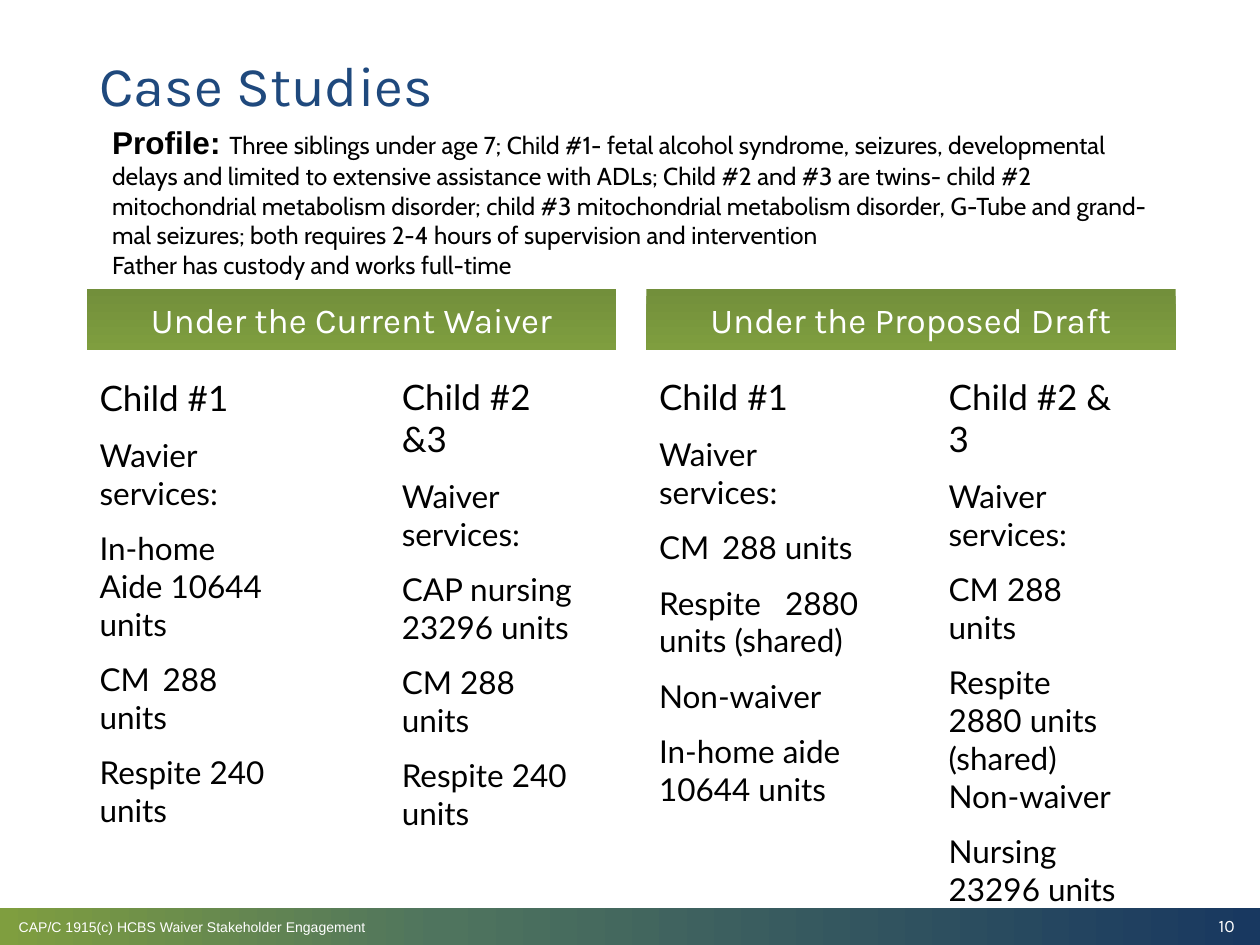
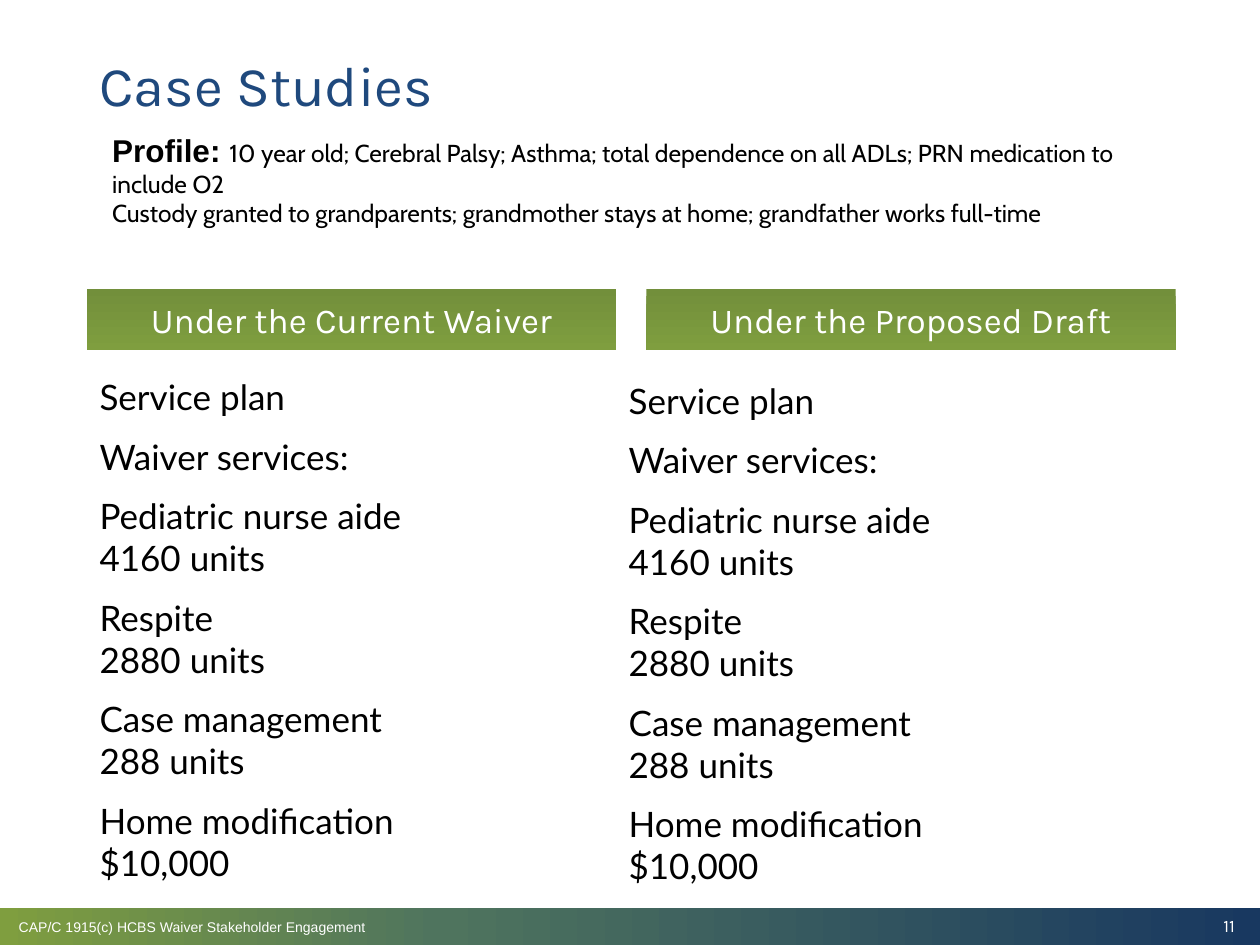
from dataclasses import dataclass

from lxml.etree import SubElement
from pptx import Presentation
from pptx.dml.color import RGBColor
from pptx.enum.shapes import MSO_SHAPE
from pptx.enum.text import MSO_ANCHOR as Anchor, MSO_AUTO_SIZE as AutoSize, PP_ALIGN as Align
from pptx.oxml.ns import qn
from pptx.util import Pt

TITLE = "Case Studies"
BANDS = ("Under the Current Waiver", "Under the Proposed Draft")
FOOTER = "CAP/C 1915(c) HCBS Waiver Stakeholder Engagement"

SERVICE_PLAN = [
    "Service plan",
    "Waiver services:",
    "Pediatric nurse aide\v4160 units",
    "Respite\v2880 units",
    "Case management\v288 units",
    "Home modification\v$10,000",
]

CASES = [
    {
        "number": "10",
        "profile": [
            "Three siblings under age 7; Child #1- fetal alcohol syndrome, seizures, developmental "
            "delays and limited to extensive assistance with ADLs; Child #2 and #3 are twins- "
            "child #2 mitochondrial metabolism disorder; child #3 mitochondrial metabolism disorder, "
            "G-Tube and grand-mal seizures; both requires 2-4 hours of supervision and intervention",
            "Father has custody and works full-time",
        ],
        "profile_box": (57, 67, 612, 148),
        "service_size": 18,
        "columns": [
            {
                "box": (49.7, 211.7, 113.8, 260),
                "tab": 38,
                "lines": ["Child #1", "Wavier services:", "In-home Aide 10644 units",
                          "CM\t288 units", "Respite 240 units"],
            },
            {
                "box": (369.4, 211, 131.8, 249),
                "tab": 47,
                "wide_tab": 67,
                "lines": ["Child #1", "Waiver services:", "CM\t288 units",
                          "Respite\t2880 units (shared)", "Non-waiver", "In-home aide 10644 units"],
            },
            {
                "box": (222.5, 211, 113.8, 232),
                "lines": ["Child #2 &3", "Waiver services:", "CAP nursing 23296 units",
                          "CM 288 units", "Respite 240 units"],
            },
            {
                "box": (535, 211, 113.8, 286),
                "lines": ["Child #2 & 3", "Waiver services:", "CM 288 units",
                          "Respite 2880 units (shared) Non-waiver", "Nursing 23296 units"],
            },
        ],
    },
    {
        "number": "11",
        "profile": [
            "10 year old; Cerebral Palsy; Asthma; total dependence on all ADLs; "
            "PRN medication to include O2",
            "Custody granted to grandparents; grandmother stays at home; grandfather works full-time",
        ],
        "profile_box": (57, 71.3, 612, 97),
        "service_size": 20,
        "columns": [
            {"box": (49.7, 211, 302.4, 232), "lines": SERVICE_PLAN},
            {"box": (352, 213, 302.4, 232), "lines": SERVICE_PLAN},
        ],
    },
]


@dataclass(frozen=True)
class Theme:
    title_color: str = "1F497D"
    text_color: str = "000000"
    light_color: str = "FFFFFF"
    band_stops: tuple = ((0, "728F3B"), (100, "7F9E3F"))
    footer_stops: tuple = ((0, "7F9E3F"), (35, "4F745E"), (100, "183860"))
    heading_font: str = "Karla"
    list_font: str = "Lato"
    profile_font: str = "Cabin"
    label_font: str = "Arial"
    title_size: float = 32
    heading_size: float = 20
    label_size: float = 18
    profile_size: float = 14
    number_size: float = 10
    footer_size: float = 8


THEME = Theme()
WIDTH, HEIGHT = 720, 540
TITLE_BOX = (49.7, 6.5, 619.2, 64.8)
BAND_BOX = (49.7, 165, 302.4, 35.3)
BAND_STEP = 319.7
FOOTER_BOX = (0, 519, WIDTH, 21)
FOOTER_TEXT_BOX = (3.6, 521.3, 566, 17.3)
NUMBER_BOX = (543.6, 523.4, 162, 10.8)
BAND_INDEXES = (1, 3)
LIST_INDEXES = (2, 4)


def place(shape, box):
    shape.left, shape.top, shape.width, shape.height = (Pt(value) for value in box)


def style_run(run, font, size, color, bold=False):
    run.font.name = font
    run.font.size = Pt(size)
    run.font.bold = bold
    run.font.color.rgb = RGBColor.from_string(color)


def style_paragraph(paragraph, font, size, color, align=Align.LEFT, before=0, tab=None):
    paragraph.alignment = align
    paragraph.space_before = Pt(before)
    properties = paragraph._p.get_or_add_pPr()
    properties.set("marL", "0")
    properties.set("indent", "0")
    SubElement(properties, qn("a:buNone"))
    if tab:
        tabs = SubElement(properties, qn("a:tabLst"))
        SubElement(tabs, qn("a:tab"), pos=str(Pt(tab)), algn="l")
    for run in paragraph.runs:
        style_run(run, font, size, color)


def prepare_frame(shape, anchor=Anchor.TOP):
    frame = shape.text_frame
    frame.word_wrap = True
    frame.auto_size = AutoSize.NONE
    frame.vertical_anchor = anchor
    return frame


def set_gradient(shape, stops, angle):
    shape.fill.gradient()
    shape.fill.gradient_angle = angle
    stop_list = next(shape._element.spPr.iter(qn("a:gsLst")))
    for stop in list(stop_list):
        stop_list.remove(stop)
    for position, color in stops:
        stop = SubElement(stop_list, qn("a:gs"), pos=str(position * 1000))
        SubElement(stop, qn("a:srgbClr"), val=color)


def add_text_box(slide, box):
    return slide.shapes.add_textbox(*(Pt(value) for value in box))


def write_line(shape, text, font, size, color, align=Align.LEFT, anchor=Anchor.MIDDLE, before=0):
    frame = prepare_frame(shape, anchor)
    frame.text = text
    style_paragraph(frame.paragraphs[0], font, size, color, align, before)
    return frame


def add_footer(slide, number):
    strip = slide.shapes.add_shape(MSO_SHAPE.RECTANGLE, *(Pt(value) for value in FOOTER_BOX))
    strip.shadow.inherit = False
    strip.line.fill.background()
    set_gradient(strip, THEME.footer_stops, 0)
    write_line(add_text_box(slide, FOOTER_TEXT_BOX), FOOTER,
               THEME.label_font, THEME.footer_size, THEME.light_color)
    frame = write_line(add_text_box(slide, NUMBER_BOX), number, THEME.heading_font,
                       THEME.number_size, THEME.light_color, Align.RIGHT)
    frame.margin_left = frame.margin_right = frame.margin_top = frame.margin_bottom = 0


def add_title(slide):
    title = slide.shapes.title
    place(title, TITLE_BOX)
    frame = write_line(title, TITLE, THEME.heading_font, THEME.title_size,
                       THEME.title_color, anchor=Anchor.BOTTOM, before=7.5)
    frame.paragraphs[0].line_spacing = 0.9


def add_bands(slide):
    left, top, width, height = BAND_BOX
    for position, (index, text) in enumerate(zip(BAND_INDEXES, BANDS)):
        band = slide.placeholders[index]
        place(band, (left + position * BAND_STEP, top, width, height))
        set_gradient(band, THEME.band_stops, 270)
        write_line(band, text, THEME.heading_font, THEME.heading_size,
                   THEME.light_color, Align.CENTER)


def add_profile(slide, paragraphs, box):
    frame = prepare_frame(add_text_box(slide, box))
    frame.text = "\n".join(["Profile: "] + paragraphs[1:])
    for paragraph in frame.paragraphs:
        style_paragraph(paragraph, THEME.profile_font, THEME.profile_size, THEME.text_color)
    opening = frame.paragraphs[0]
    style_run(opening.runs[0], THEME.label_font, THEME.label_size, THEME.text_color, True)
    description = opening.add_run()
    description.text = paragraphs[0]
    style_run(description, THEME.profile_font, THEME.profile_size, THEME.text_color)


def fill_column(shape, column, service_size):
    frame = prepare_frame(shape)
    frame.text = "\n".join(column["lines"])
    for position, paragraph in enumerate(frame.paragraphs):
        size = service_size if position else THEME.heading_size
        tab = None
        if "\t" in paragraph.text:
            is_wide = paragraph.text.startswith("Respite")
            tab = column["wide_tab"] if is_wide else column["tab"]
        style_paragraph(paragraph, THEME.list_font, size, THEME.text_color, before=10, tab=tab)


def add_columns(slide, columns, service_size):
    for position, column in enumerate(columns):
        if position < len(LIST_INDEXES):
            shape = slide.placeholders[LIST_INDEXES[position]]
            place(shape, column["box"])
        else:
            shape = add_text_box(slide, column["box"])
        fill_column(shape, column, service_size)


def main():
    presentation = Presentation()
    presentation.slide_width, presentation.slide_height = Pt(WIDTH), Pt(HEIGHT)
    layout = presentation.slide_layouts.get_by_name("Comparison")
    for case in CASES:
        slide = presentation.slides.add_slide(layout)
        add_footer(slide, case["number"])
        add_title(slide)
        add_bands(slide)
        add_profile(slide, case["profile"], case["profile_box"])
        add_columns(slide, case["columns"], case["service_size"])
    presentation.save("out.pptx")


if __name__ == "__main__":
    main()
